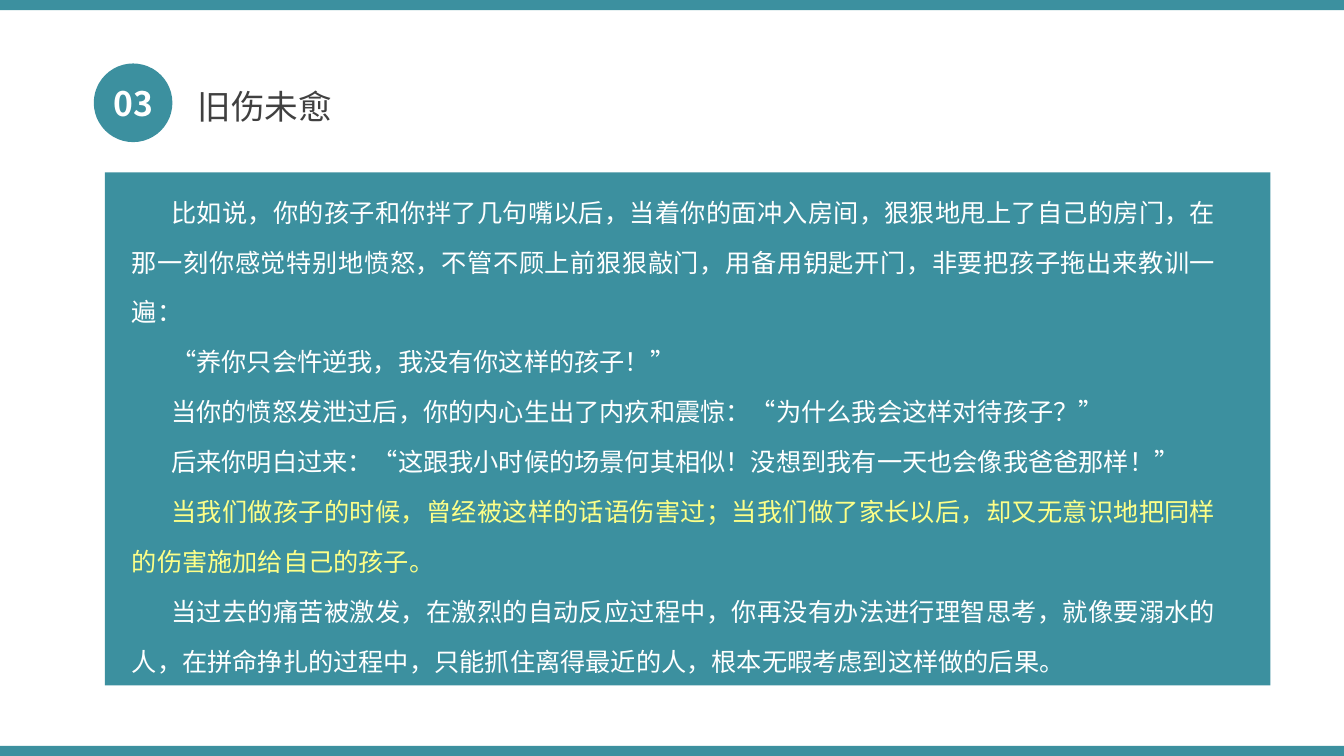
import pptx
import pptx.util
import pptx.dml.color
import pptx.enum.shapes
import pptx.enum.text
import pptx.oxml
import pptx.oxml.ns

RGBColor = pptx.dml.color.RGBColor
SHAPE = pptx.enum.shapes.MSO_SHAPE
ALIGN = pptx.enum.text.PP_ALIGN

TEAL = RGBColor(0x3C, 0x90, 0x9F)
WHITE = RGBColor(0xFF, 0xFF, 0xFF)
GREY = RGBColor(0x40, 0x40, 0x40)
YELLOW = RGBColor(0xFD, 0xFF, 0x88)

WIDE, HIGH, BAR = 1333, 750, 10
INDENT = 39

STORY = [
    ("比如说，你的孩子和你拌了几句嘴以后，当着你的面冲入房间，狠狠地甩上了自己的房门，在那一刻你感觉特别地愤怒，不管不顾上前狠狠敲门，用备用钥匙开门，非要把孩子拖出来教训一遍：", WHITE),
    ("“养你只会忤逆我，我没有你这样的孩子！”", WHITE),
    ("当你的愤怒发泄过后，你的内心生出了内疚和震惊：“为什么我会这样对待孩子？”", WHITE),
    ("后来你明白过来：“这跟我小时候的场景何其相似！没想到我有一天也会像我爸爸那样！”", WHITE),
    ("当我们做孩子的时候，曾经被这样的话语伤害过；当我们做了家长以后，却又无意识地把同样的伤害施加给自己的孩子。", YELLOW),
    ("当过去的痛苦被激发，在激烈的自动反应过程中，你再没有办法进行理智思考，就像要溺水的人，在拼命挣扎的过程中，只能抓住离得最近的人，根本无暇考虑到这样做的后果。", WHITE),
]


def px(n):
    """Turn px (100 to the inch) into EMU."""
    return pptx.util.Emu(n * 9144)


class Page:
    face = "Noto Sans CJK SC"

    def __init__(self, deck):
        self.slide = deck.slides.add_slide(deck.slide_layouts[6])

    def shape(self, kind, *box):
        item = self.slide.shapes.add_shape(kind, *map(px, box))
        item.shadow.inherit = False
        item.fill.solid()
        item.fill.fore_color.rgb = TEAL
        item.line.fill.background()

    def text(self, box, lines, size, align, space=1.0, bold=False, indent=0):
        frame = self.slide.shapes.add_textbox(*map(px, box)).text_frame
        frame.word_wrap = True
        for i, (words, color) in enumerate(lines):
            para = frame.add_paragraph() if i else frame.paragraphs[0]
            para.text = words
            para.alignment = align
            para.line_spacing = space
            # Keep closing punctuation inside the margin
            props = para._p.get_or_add_pPr()
            props.set("hangingPunct", "0")
            props.set("indent", str(px(indent)))
            self.style(para.font, size, color, bold)

    def style(self, font, size, color, bold):
        font.size = pptx.util.Pt(size)
        font.bold = bold
        font.color.rgb = color
        font.name = self.face
        # East Asian glyphs take their own typeface element
        east = pptx.oxml.parse_xml(
            f'<a:ea {pptx.oxml.ns.nsdecls("a")} typeface="{self.face}"/>')
        font._element.append(east)


def main():
    deck = pptx.Presentation()
    deck.slide_width, deck.slide_height = px(WIDE), px(HIGH)
    page = Page(deck)

    # Panel and edge bars
    page.shape(SHAPE.RECTANGLE, 104, 171, 1156, 509)
    for top in (0, HIGH - BAR):
        page.shape(SHAPE.RECTANGLE, 0, top, WIDE, BAR)

    # Numbered heading
    page.shape(SHAPE.OVAL, 93, 63, 78, 78)
    page.text((96, 77, 72, 50), [("03", WHITE)], 24, ALIGN.CENTER, bold=True)
    page.text((186, 60, 199, 71), [("旧伤未愈", GREY)], 24, ALIGN.JUSTIFY, 1.5)

    # Story
    page.text((121, 171, 1095, 509), STORY, 18, ALIGN.JUSTIFY, 1.65,
              indent=INDENT)

    deck.save("out.pptx")


if __name__ == "__main__":
    main()
